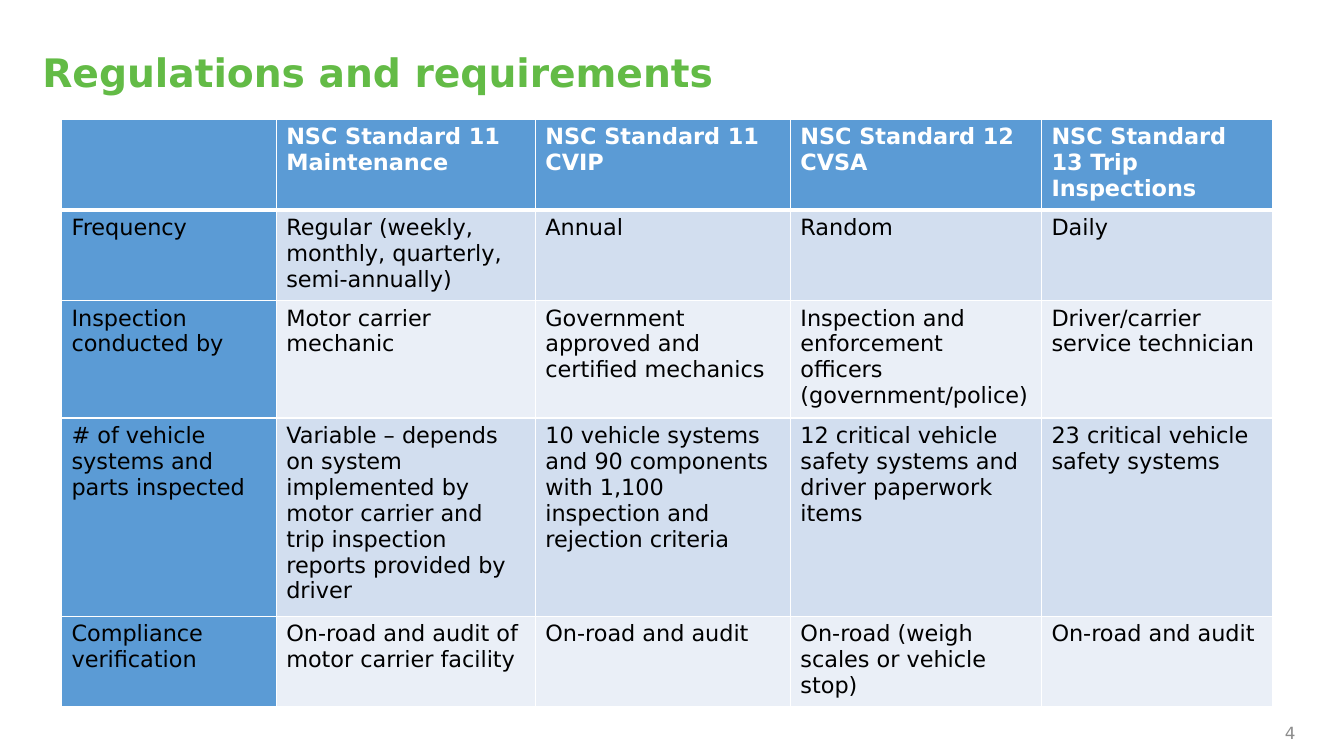
from lxml.etree import SubElement
from pptx import Presentation
from pptx.dml.color import RGBColor
from pptx.enum.text import MSO_ANCHOR, PP_ALIGN
from pptx.oxml.ns import qn
from pptx.util import Inches, Pt

TITLE = "Regulations and requirements"
PAGE = "4"
STANDARDS = [
    ["", "NSC Standard 11 Maintenance", "NSC Standard 11 CVIP",
     "NSC Standard 12 CVSA", "NSC Standard 13 Trip Inspections"],
    ["Frequency", "Regular (weekly, monthly, quarterly, semi-annually)",
     "Annual", "Random", "Daily"],
    ["Inspection conducted by", "Motor carrier mechanic",
     "Government approved and certified mechanics",
     "Inspection and enforcement officers (government/police)",
     "Driver/carrier service technician"],
    ["# of vehicle systems and parts inspected",
     "Variable – depends on system implemented by motor carrier and trip "
     "inspection reports provided by driver",
     "10 vehicle systems and 90 components with 1,100 inspection and rejection criteria",
     "12 critical vehicle safety systems and driver paperwork items",
     "23 critical vehicle safety systems"],
    ["Compliance verification", "On-road and audit of motor carrier facility",
     "On-road and audit", "On-road (weigh scales or vehicle stop)",
     "On-road and audit"],
]
COLUMN_WIDTHS = [2.13, 2.57, 2.53, 2.49, 2.29]
ROW_HEIGHTS = [0.87, 0.87, 1.12, 1.9, 0.87]

FONT = "DejaVu Sans"
GREEN = RGBColor(0x63, 0xBB, 0x46)
BLUE = RGBColor(0x5B, 0x9B, 0xD5)
BANDS = [RGBColor(0xEA, 0xEF, 0xF7), RGBColor(0xD2, 0xDE, 0xEF)]
WHITE = RGBColor(0xFF, 0xFF, 0xFF)
BLACK = RGBColor(0, 0, 0)
GREY = RGBColor(0x8C, 0x8C, 0x8C)


def write(frame, text, size=16, color=BLACK, bold=False, align=PP_ALIGN.LEFT, spacing=1.0):
    paragraph = frame.paragraphs[0]
    paragraph.alignment = align
    paragraph.line_spacing = spacing
    font = paragraph.font if not text else paragraph.add_run().font
    if text:
        paragraph.runs[0].text = text
    font.name, font.size, font.bold = FONT, Pt(size), bold
    font.color.rgb = color


def add_label(slide, left, top, width, height, text, anchor, **style):
    label = slide.shapes.add_textbox(Inches(left), Inches(top), Inches(width), Inches(height))
    frame = label.text_frame
    frame.word_wrap = True
    frame.vertical_anchor = anchor
    frame.margin_left = frame.margin_right = frame.margin_top = frame.margin_bottom = 0
    write(frame, text, **style)


def add_borders(cell, widths):
    properties = cell._tc.get_or_add_tcPr()
    for position, (side, width) in enumerate(widths.items()):
        line = SubElement(properties, qn(f"a:ln{side}"), w=str(Pt(width)))
        fill = SubElement(line, qn("a:solidFill"))
        SubElement(fill, qn("a:srgbClr"), val=str(WHITE))
        properties.insert(position, line)


def add_standards(slide, left, top):
    table = slide.shapes.add_table(
        len(STANDARDS), len(COLUMN_WIDTHS), Inches(left), Inches(top),
        Inches(sum(COLUMN_WIDTHS)), Inches(sum(ROW_HEIGHTS))).table
    for column, width in zip(table.columns, COLUMN_WIDTHS):
        column.width = Inches(width)
    for r, (entries, height) in enumerate(zip(STANDARDS, ROW_HEIGHTS)):
        table.rows[r].height = Inches(height)
        header = r == 0
        for c, entry in enumerate(entries):
            cell = table.cell(r, c)
            cell.fill.solid()
            cell.fill.fore_color.rgb = BLUE if header or c == 0 else BANDS[r % 2]
            add_borders(cell, {"L": 1, "R": 1, "T": 3 if r == 1 else 1, "B": 3 if header else 1})
            write(cell.text_frame, entry, color=WHITE if header else BLACK, bold=header)


def main():
    presentation = Presentation()
    presentation.slide_width, presentation.slide_height = Inches(13.33), Inches(7.5)
    slide = presentation.slides.add_slide(presentation.slide_layouts[6])
    add_label(slide, 0.42, 0.49, 11.75, 0.51, TITLE, MSO_ANCHOR.MIDDLE,
              size=28, color=GREEN, bold=True, spacing=0.9)
    add_standards(slide, 0.61, 1.18)
    add_label(slide, 9.85, 6.97, 3, 0.4, PAGE, MSO_ANCHOR.BOTTOM,
              size=12, color=GREY, align=PP_ALIGN.RIGHT)
    presentation.save("out.pptx")


if __name__ == "__main__":
    main()
